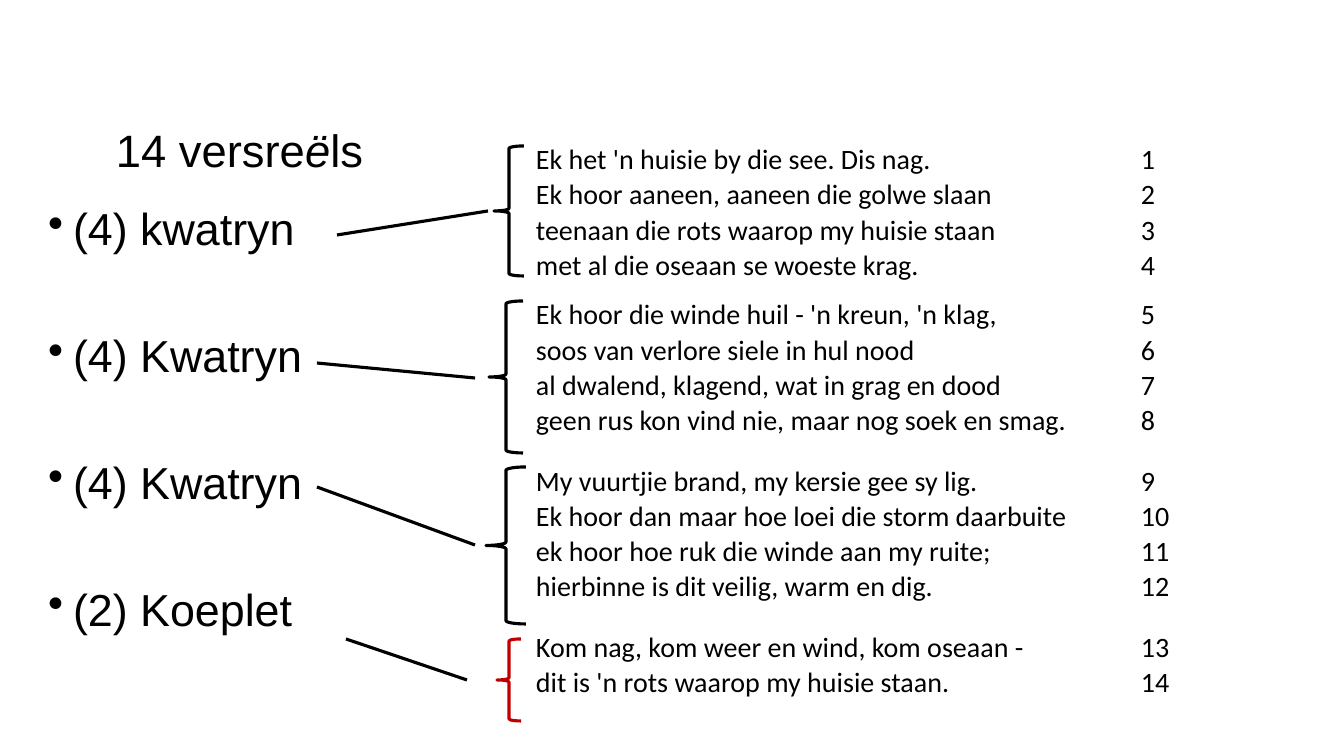
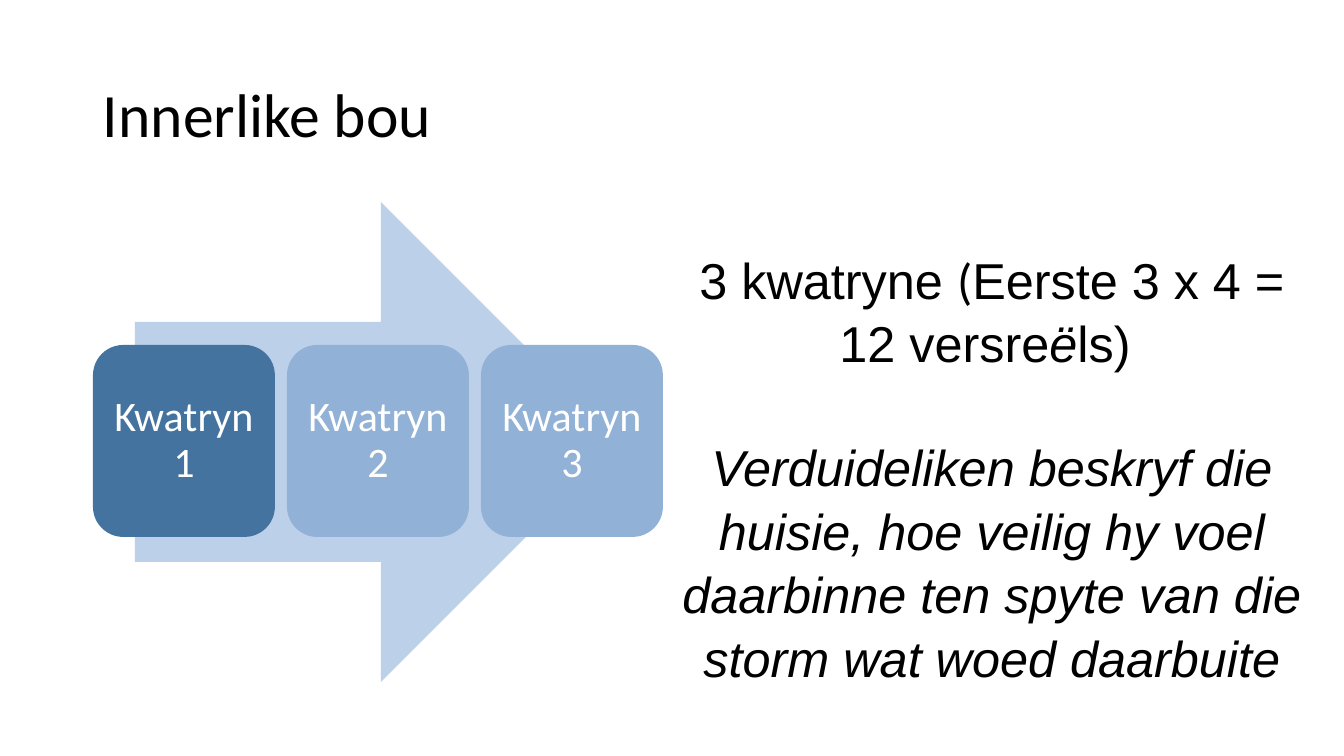
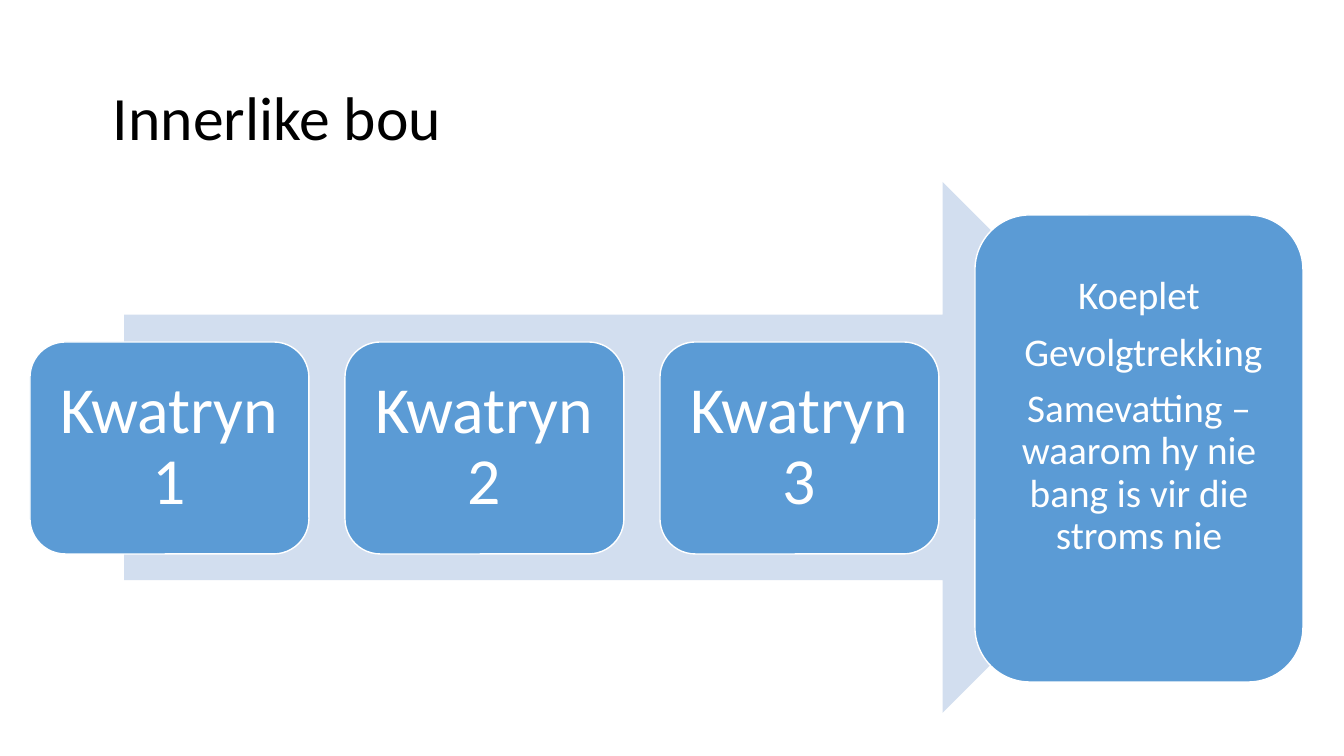
import itertools
from dataclasses import dataclass, replace
from typing import NamedTuple, Optional

import pptx
import pptx.dml.color
import pptx.enum.shapes
import pptx.enum.text
import pptx.oxml.ns
import pptx.util
from lxml import etree

SLIDE_WIDTH, SLIDE_HEIGHT = 1344, 756
EMU_PER_PX = 12192000 / SLIDE_WIDTH

BLACK = pptx.dml.color.RGBColor(0x00, 0x00, 0x00)
WHITE = pptx.dml.color.RGBColor(0xFF, 0xFF, 0xFF)
RED = pptx.dml.color.RGBColor(0xC0, 0x00, 0x00)
STEEL = pptx.dml.color.RGBColor(0x43, 0x73, 0x9E)
SOFT_BLUE = pptx.dml.color.RGBColor(0x91, 0xB1, 0xD6)
PALE_BLUE = pptx.dml.color.RGBColor(0xBD, 0xD0, 0xE9)
BLUE = pptx.dml.color.RGBColor(0x5B, 0x9B, 0xD5)
MIST = pptx.dml.color.RGBColor(0xD2, 0xDE, 0xEF)

SANS, BODY = "Arial", "Calibri"
ALIGN = pptx.enum.text.PP_ALIGN
ANCHOR = pptx.enum.text.MSO_ANCHOR
SHAPE = pptx.enum.shapes.MSO_SHAPE


class Box(NamedTuple):
    left: int
    top: int
    width: int
    height: int


class Margins(NamedTuple):
    left: int = 10
    top: int = 5
    right: int = 10
    bottom: int = 5


class Span(NamedTuple):
    """Part of a paragraph; font None keeps the font of the paragraph."""
    text: str
    font: Optional[str] = None
    italic: Optional[bool] = None


@dataclass(frozen=True)
class TextStyle:
    size: float
    font: str = BODY
    color: pptx.dml.color.RGBColor = BLACK
    italic: bool = False
    align: ALIGN = ALIGN.LEFT
    line_spacing: float = 1.0
    space_before: int = 0
    space_after: int = 0


class Section(NamedTuple):
    """A stanza's label line and the brace that embraces the stanza."""
    brace: Box
    color: pptx.dml.color.RGBColor
    line_start: tuple[int, int]
    line_end: tuple[int, int]


class Step(NamedTuple):
    box: Box
    color: pptx.dml.color.RGBColor
    paragraphs: list[str]
    style: TextStyle
    margins: Margins


TITLE = TextStyle(44)
VERSE_COUNT = TextStyle(32.4, SANS)
STANZA_KIND = TextStyle(32, SANS, line_spacing=0.9, space_before=56)
VERSE = TextStyle(20, line_spacing=1.05, space_before=10, space_after=8)
REMARK = TextStyle(36, SANS, align=ALIGN.CENTER, line_spacing=1.05)
STEP_TEXT = TextStyle(30, color=WHITE, align=ALIGN.CENTER, line_spacing=0.9)

STANZA_KINDS = ["(4) kwatryn", "(4) Kwatryn", "(4) Kwatryn", "(2) Koeplet"]
STANZAS = [
    ["Ek het 'n huisie by die see. Dis nag.",
     "Ek hoor aaneen, aaneen die golwe slaan",
     "teenaan die rots waarop my huisie staan",
     "met al die oseaan se woeste krag."],
    ["Ek hoor die winde huil - 'n kreun, 'n klag,",
     "soos van verlore siele in hul nood",
     "al dwalend, klagend, wat in grag en dood",
     "geen rus kon vind nie, maar nog soek en smag."],
    ["My vuurtjie brand, my kersie gee sy lig.",
     "Ek hoor dan maar hoe loei die storm daarbuite",
     "ek hoor hoe ruk die winde aan my ruite;",
     "hierbinne is dit veilig, warm en dig."],
    ["Kom nag, kom weer en wind, kom oseaan -",
     "dit is 'n rots waarop my huisie staan."],
]
SECTIONS = [
    Section(Box(494, 146, 30, 130), BLACK, (488, 211), (337, 235)),
    Section(Box(489, 301, 34, 152), BLACK, (475, 378), (317, 363)),
    Section(Box(486, 467, 40, 157), BLACK, (475, 545), (317, 487)),
    Section(Box(497, 639, 24, 82), RED, (467, 680), (346, 639)),
]
QUATRAINS = [f"Kwatryn {number}" for number in range(1, 4)]
COUPLET = ["Koeplet", " Gevolgtrekking",
           "Samevatting – waarom hy nie bang is vir die stroms nie"]


def px(length: float) -> pptx.util.Emu:
    return pptx.util.Emu(round(length * EMU_PER_PX))


def set_margins(frame, margins: Margins) -> None:
    frame.margin_left, frame.margin_top, frame.margin_right, frame.margin_bottom = map(px, margins)


def format_paragraph(paragraph, style: TextStyle) -> None:
    paragraph.alignment = style.align
    paragraph.line_spacing = style.line_spacing
    paragraph.space_before = pptx.util.Pt(style.space_before)
    paragraph.space_after = pptx.util.Pt(style.space_after)
    font = paragraph.font
    font.name, font.size = style.font, pptx.util.Pt(style.size)
    font.italic = style.italic
    font.color.rgb = style.color


def write(frame, paragraphs: list, style: TextStyle) -> None:
    """Fill a frame; each paragraph is a string or a list of spans."""
    frame.word_wrap = True
    for index, content in enumerate(paragraphs):
        paragraph = frame.paragraphs[0] if index == 0 else frame.add_paragraph()
        if isinstance(content, str):
            paragraph.text = content
        else:
            for span in content:
                run = paragraph.add_run()
                run.text = span.text
                run.font.name, run.font.italic = span.font, span.italic
        format_paragraph(paragraph, style)


def add_text(slide, box: Box, paragraphs: list, style: TextStyle,
             margins: Margins = Margins()):
    frame = slide.shapes.add_textbox(*map(px, box)).text_frame
    set_margins(frame, margins)
    write(frame, paragraphs, style)
    return frame


def add_paragraph_property(paragraph, tag: str):
    """Place an element just ahead of the paragraph's default font."""
    properties = paragraph._p.get_or_add_pPr()
    element = etree.Element(pptx.oxml.ns.qn(tag))
    properties.find(pptx.oxml.ns.qn("a:defRPr")).addprevious(element)
    return element


def add_bullet(paragraph, indent: int) -> None:
    properties = paragraph._p.get_or_add_pPr()
    properties.set("marL", str(px(indent)))
    properties.set("indent", str(px(-indent)))
    add_paragraph_property(paragraph, "a:buChar").set("char", "•")


def add_tab_stop(paragraph, position: int) -> None:
    stops = add_paragraph_property(paragraph, "a:tabLst")
    stop = etree.SubElement(stops, pptx.oxml.ns.qn("a:tab"))
    stop.set("pos", str(px(position)))
    stop.set("algn", "l")


def add_preset(slide, preset: SHAPE, box: Box, fill=None, line=None, line_width: float = 1):
    shape = slide.shapes.add_shape(preset, *map(px, box))
    shape.shadow.inherit = False
    if fill is None:
        shape.fill.background()
    else:
        shape.fill.solid()
        shape.fill.fore_color.rgb = fill
    if line is None:
        shape.line.fill.background()
    else:
        shape.line.color.rgb = line
        shape.line.width = pptx.util.Pt(line_width)
    return shape


def add_section(slide, section: Section) -> None:
    add_preset(slide, SHAPE.LEFT_BRACE, section.brace, line=section.color, line_width=2.25)
    pointer = slide.shapes.add_connector(
        pptx.enum.shapes.MSO_CONNECTOR.STRAIGHT,
        *map(px, section.line_start + section.line_end))
    pointer.line.color.rgb = BLACK
    pointer.line.width = pptx.util.Pt(2.25)
    etree.SubElement(pointer._element.spPr, pptx.oxml.ns.qn("a:effectLst"))


def add_step(slide, step: Step, outline=None) -> None:
    shape = add_preset(slide, SHAPE.ROUNDED_RECTANGLE, step.box, step.color, outline)
    frame = shape.text_frame
    frame.vertical_anchor = ANCHOR.MIDDLE
    set_margins(frame, step.margins)
    write(frame, step.paragraphs, step.style)


def build_verse_slide(slide) -> None:
    add_text(slide, Box(106, 76, 1158, 223),
             [[Span("14 versre"), Span("ë", italic=True), Span("ls")]],
             VERSE_COUNT, Margins(top=46))

    kinds = add_text(slide, Box(38, 202, 625, 480), STANZA_KINDS, STANZA_KIND)
    for paragraph in kinds.paragraphs:
        add_bullet(paragraph, 25)

    numbers = itertools.count(1)
    poem = add_text(
        slide, Box(526, 135, 771, 543),
        ["\v".join(f"{verse}\t{next(numbers)}" for verse in stanza) for stanza in STANZAS],
        VERSE)
    poem.paragraphs[0].space_after = pptx.util.Pt(0)
    for paragraph in poem.paragraphs:
        add_tab_stop(paragraph, 605)

    for section in SECTIONS:
        add_section(slide, section)


def build_quatrain_slide(slide) -> None:
    add_text(slide, Box(93, 40, 1159, 146), ["Innerlike bou"], TITLE, Margins(top=36))
    add_preset(slide, SHAPE.RIGHT_ARROW, Box(135, 202, 486, 480), PALE_BLUE)
    for index, (label, color) in enumerate(zip(QUATRAINS, [STEEL, SOFT_BLUE, SOFT_BLUE])):
        add_step(slide, Step(Box(93 + 194 * index, 345, 182, 192), color, [label],
                             STEP_TEXT, Margins(11, 12, 11, 12)))

    remark = add_text(
        slide, Box(656, 209, 672, 468),
        [[Span("3 kwatryne "), Span("(", font=BODY), Span("Eerste 3 x 4 = 12 versre"),
          Span("ë", italic=True), Span("ls) ")],
         "Verduideliken beskryf die huisie, hoe veilig hy voel daarbinne "
         "ten spyte van die storm wat woed daarbuite"],
        REMARK, Margins(top=37))
    explanation = remark.paragraphs[1]
    explanation.font.italic = True
    explanation.space_before = pptx.util.Pt(43)


def build_conclusion_slide(slide) -> None:
    add_text(slide, Box(103, 79, 1158, 264), ["Innerlike bou"], TITLE, Margins(top=0))
    add_preset(slide, SHAPE.RIGHT_ARROW, Box(124, 182, 1084, 531), MIST)
    left, pitch = 30, 315
    steps = [Step(Box(left + pitch * index, 342, 279, 212), BLUE, [label],
                  replace(STEP_TEXT, size=47), Margins(19, 20, 19, 20))
             for index, label in enumerate(QUATRAINS)]
    steps.append(Step(Box(left + pitch * len(QUATRAINS), 215, 328, 467), BLUE, COUPLET,
                      replace(STEP_TEXT, size=28, space_before=10), Margins(12, 12, 12, 75)))
    for step in steps:
        add_step(slide, step, WHITE)


def main() -> None:
    deck = pptx.Presentation()
    deck.slide_width, deck.slide_height = px(SLIDE_WIDTH), px(SLIDE_HEIGHT)
    blank = deck.slide_layouts[6]
    for build in (build_verse_slide, build_quatrain_slide, build_conclusion_slide):
        build(deck.slides.add_slide(blank))
    deck.save("out.pptx")


if __name__ == "__main__":
    main()
